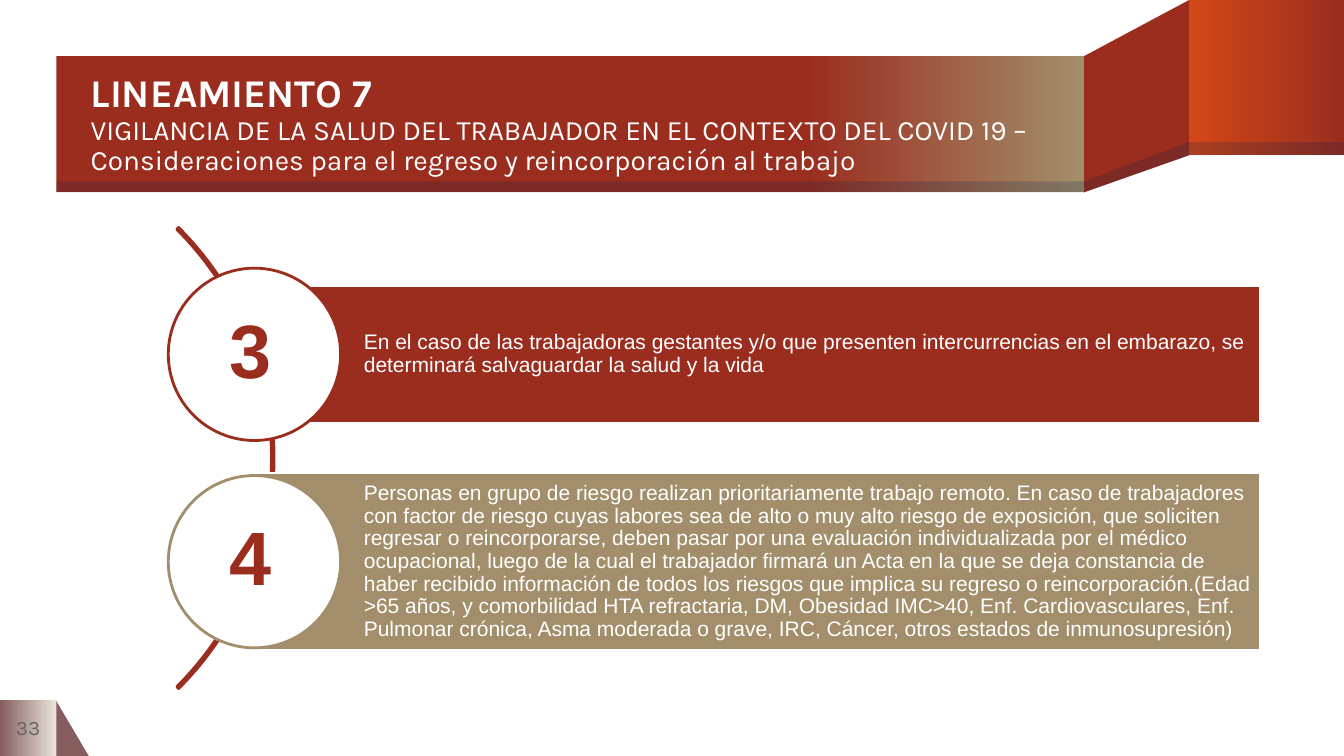
from copy import deepcopy
from dataclasses import dataclass

from lxml.etree import SubElement
from pptx import Presentation
from pptx.dml.color import RGBColor
from pptx.enum.shapes import MSO_SHAPE
from pptx.enum.text import MSO_ANCHOR, MSO_AUTO_SIZE, PP_ALIGN
from pptx.oxml.ns import qn
from pptx.util import Pt


@dataclass(frozen=True)
class Theme:
    red: str = "9B2D1F"
    orange: str = "D34817"
    sand: str = "A28E6A"
    mauve: str = "855D5D"
    cream: str = "E9E5DC"
    navy: str = "001F46"
    gray: str = "696464"
    white: str = "FFFFFF"
    heading_font: str = "Karla"
    body_font: str = "Arial"
    title_size: float = 28
    subtitle_size: float = 20
    body_size: float = 15
    number_size: float = 54
    page_size: float = 14.7
    shade_opacity: int = 20


THEME = Theme()
TITLE = (
    "LINEAMIENTO 7\vVIGILANCIA DE LA SALUD DEL TRABAJADOR EN EL CONTEXTO DEL COVID 19 – "
    "Consideraciones para el regreso y reincorporación al trabajo"
)
ITEMS = [
    ("3", 253.1, 98.6, THEME.red,
     "En el caso de las trabajadoras gestantes y/o que presenten intercurrencias en el "
     "embarazo, se determinará salvaguardar la salud y la vida"),
    ("4", 401.2, 126.7, THEME.sand,
     "Personas en grupo de riesgo realizan prioritariamente trabajo remoto. En caso de "
     "trabajadores con factor de riesgo cuyas labores sea de alto o muy alto riesgo de "
     "exposición, que soliciten regresar o reincorporarse, deben pasar por una evaluación "
     "individualizada por el médico ocupacional, luego de la cual el trabajador firmará un "
     "Acta en la que se deja constancia de haber recibido información de todos los riesgos "
     "que implica su regreso o reincorporación.(Edad >65 años, y comorbilidad HTA "
     "refractaria, DM, Obesidad IMC>40, Enf. Cardiovasculares, Enf. Pulmonar crónica, Asma "
     "moderada o grave, IRC, Cáncer, otros estados de inmunosupresión)"),
]


def paint(shape, fill=None, line=None, opacity=100):
    shape.shadow.inherit = False
    if fill:
        shape.fill.solid()
        shape.fill.fore_color.rgb = RGBColor.from_string(fill)
    else:
        shape.fill.background()
    if opacity < 100:
        color = shape._element.spPr.find(qn("a:solidFill"))[0]
        SubElement(color, qn("a:alpha"), val=str(opacity * 1000))
    if line:
        shape.line.color.rgb = RGBColor.from_string(line)
        shape.line.width = Pt(2)
    else:
        shape.line.fill.background()


def add_box(slide, kind, left, top, width, height, **style):
    shape = slide.shapes.add_shape(kind, Pt(left), Pt(top), Pt(width), Pt(height))
    paint(shape, **style)
    return shape


def add_gradient_box(slide, left, top, width, height, stops):
    shape = add_box(slide, MSO_SHAPE.RECTANGLE, left, top, width, height)
    shape.fill.gradient()
    shape.fill.gradient_angle = 0
    stop_list = shape._element.spPr.find(".//" + qn("a:gsLst"))
    while len(stop_list) < len(stops):
        stop_list.append(deepcopy(stop_list[-1]))
    for stop, (position, color) in zip(shape.fill.gradient_stops, stops):
        stop.position = position
        stop.color.rgb = RGBColor.from_string(color)
    return shape


def add_polygon(slide, points, **style):
    start, *others = [(Pt(x), Pt(y)) for x, y in points]
    builder = slide.shapes.build_freeform(*start, scale=1.0)
    builder.add_line_segments(others, close=True)
    shape = builder.convert_to_shape()
    paint(shape, **style)


def format_run(run, size, font, color, bold=False):
    run.font.size = Pt(size)
    run.font.name = font
    run.font.bold = bold
    run.font.color.rgb = RGBColor.from_string(color)


def write(shape, text, formats, margins=(0, 0, 0, 0), align=PP_ALIGN.LEFT,
          anchor=MSO_ANCHOR.MIDDLE, spacing=1.0):
    frame = shape.text_frame
    frame.text = text
    frame.word_wrap = True
    frame.auto_size = MSO_AUTO_SIZE.NONE
    frame.vertical_anchor = anchor
    frame.margin_left, frame.margin_top, frame.margin_right, frame.margin_bottom = map(Pt, margins)
    paragraph = frame.paragraphs[0]
    paragraph.alignment = align
    paragraph.line_spacing = spacing
    for run, run_format in zip(paragraph.runs, formats):
        format_run(run, *run_format)


def add_text(slide, left, top, width, height, text, run_format, **layout):
    box = slide.shapes.add_textbox(Pt(left), Pt(top), Pt(width), Pt(height))
    write(box, text, [run_format], **layout)


def add_header(slide):
    left, fold, wall, right = 40.3, 774, 849.4, 960
    top, bottom, wall_bottom = 40.3, 137.5, 110.9
    shade_top, wall_shade_top = 129.6, 101.5
    shade = {"fill": THEME.navy, "opacity": THEME.shade_opacity}
    add_polygon(slide, [(wall, 0), (fold, top), (fold, bottom), (wall, wall_bottom)], fill=THEME.red)
    add_gradient_box(slide, wall, 0, right - wall, wall_bottom,
                     [(0, THEME.orange), (1, THEME.red)])
    add_gradient_box(slide, left, top, fold - left, bottom - top,
                     [(0, THEME.red), (0.73, THEME.red), (1, THEME.sand)])
    add_polygon(slide, [(wall, wall_shade_top), (fold, shade_top), (fold, bottom),
                        (wall, wall_bottom)], **shade)
    add_box(slide, MSO_SHAPE.RECTANGLE, wall, wall_shade_top, right - wall,
            wall_bottom - wall_shade_top, **shade)
    band = add_box(slide, MSO_SHAPE.RECTANGLE, left, shade_top, fold - left,
                   bottom - shade_top, **shade)

    title = slide.shapes.title
    title.left, title.top, title.width, title.height = Pt(64.8), Pt(41), Pt(709.2), Pt(96.5)
    write(title, TITLE, [
        (THEME.title_size, THEME.heading_font, THEME.white, True),
        (THEME.subtitle_size, THEME.heading_font, THEME.white),
    ], spacing=0.9)
    band._element.addnext(title._element)


def add_page_number(slide, number):
    side, top = 40.3, 499.7
    add_box(slide, MSO_SHAPE.RIGHT_TRIANGLE, 39.6, top, 23.8, side, fill=THEME.mauve)
    add_gradient_box(slide, 0, top, side, side, [(0, THEME.mauve), (1, THEME.cream)])
    add_text(slide, 0, top, side, side, number,
             (THEME.page_size, THEME.heading_font, THEME.gray), align=PP_ALIGN.CENTER)


def add_arc(slide):
    arc = add_box(slide, MSO_SHAPE.BLOCK_ARC, -270, 94.3, 465.8, 465.8, line=THEME.red)
    for index, value in enumerate((189, 27, 0.004)):
        arc.adjustments[index] = value


def add_item(slide, number, middle, height, color, text):
    diameter = 123.1
    bar = add_box(slide, MSO_SHAPE.RECTANGLE, 181.4, middle - height / 2, 719.3, height,
                  fill=color, line=THEME.white)
    write(bar, text, [(THEME.body_size, THEME.body_font, THEME.white)],
          margins=(78.5, 2.9, 2.9, 2.9), spacing=0.9)
    add_box(slide, MSO_SHAPE.OVAL, 120.2, middle - diameter / 2, diameter, diameter,
            fill=THEME.white, line=color)
    add_text(slide, 157, middle - 40.2, 76.3, 72.7, number,
             (THEME.number_size, THEME.body_font, THEME.red, True),
             margins=(7.2, 3.6, 7.2, 3.6), anchor=MSO_ANCHOR.TOP)


def main():
    presentation = Presentation()
    presentation.slide_width, presentation.slide_height = Pt(960), Pt(540)
    slide = presentation.slides.add_slide(presentation.slide_layouts[5])
    add_header(slide)
    add_page_number(slide, "33")
    add_arc(slide)
    for item in ITEMS:
        add_item(slide, *item)
    presentation.save("out.pptx")


if __name__ == "__main__":
    main()
